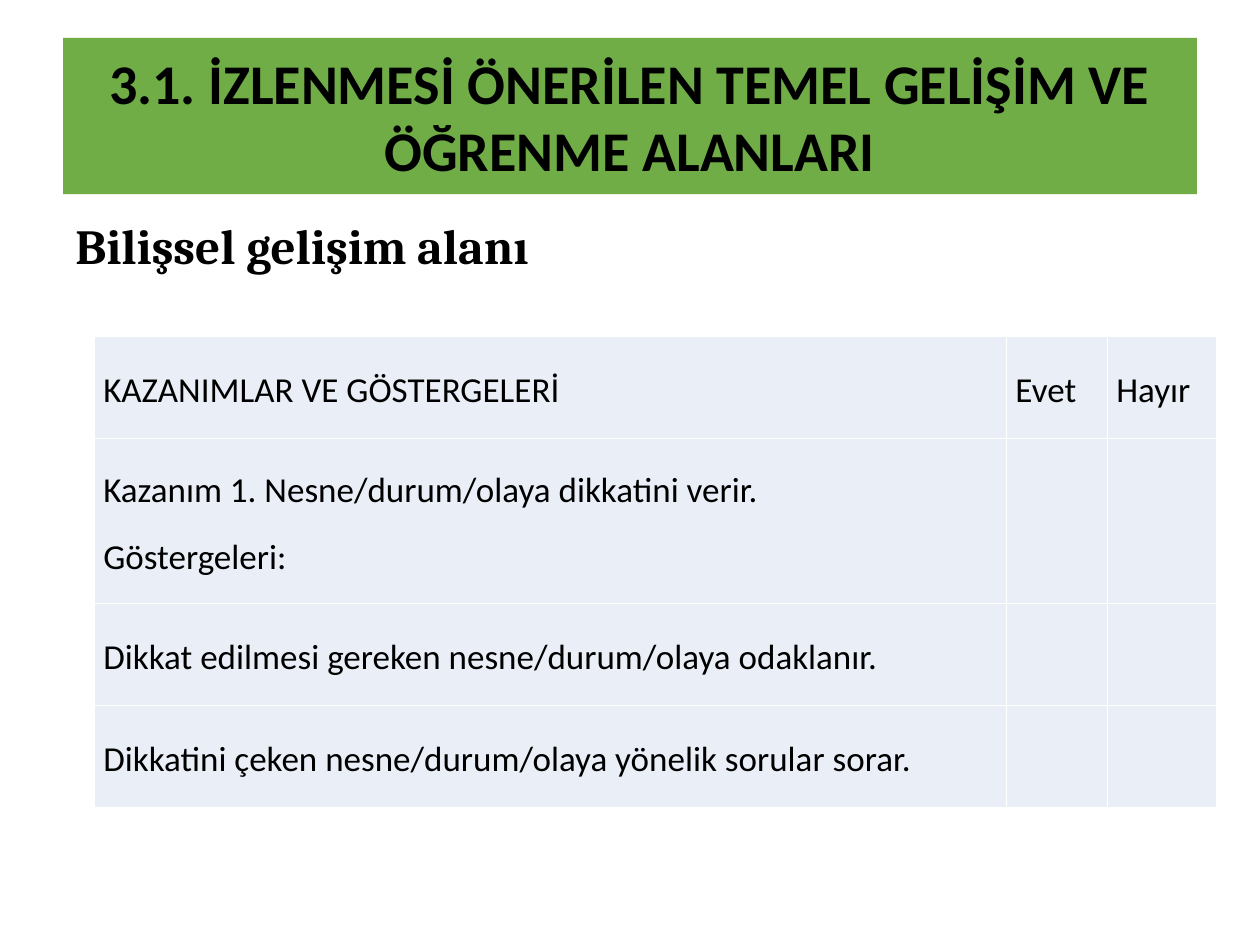
from lxml.etree import SubElement
from pptx import Presentation
from pptx.dml.color import RGBColor as Rgb
from pptx.enum.text import MSO_ANCHOR as Anchor, PP_ALIGN as Align
from pptx.oxml.ns import qn
from pptx.util import Inches, Pt

COLORS = {"banner": "70AD47", "cell": "EAEFF7", "border": "FFFFFF", "text": "000000"}
HEADING = "3.1. İZLENMESİ ÖNERİLEN TEMEL GELİŞİM VE ÖĞRENME ALANLARI"
AREA = "Bilişsel gelişim alanı"
ROWS = [
    ("KAZANIMLAR VE GÖSTERGELERİ", "Evet", "Hayır"),
    ("Kazanım 1. Nesne/durum/olaya dikkatini verir.\nGöstergeleri:", "", ""),
    ("Dikkat edilmesi gereken nesne/durum/olaya odaklanır.", "", ""),
    ("Dikkatini çeken nesne/durum/olaya yönelik sorular sorar.", "", ""),
]
COLUMN_WIDTHS = (7.24, 0.8, 0.87)
ROW_HEIGHTS = (0.81, 1.31, 0.81, 0.81)


def color(name):
    return Rgb.from_string(COLORS[name])


def format_runs(frame, size, font, bold=False):
    for paragraph in frame.paragraphs:
        for run in paragraph.runs:
            run.font.size = Pt(size)
            run.font.name = font
            run.font.bold = bold
            run.font.color.rgb = color("text")


def place_banner(slide, left, top, width, height):
    banner = slide.shapes.title
    banner.left, banner.top = Inches(left), Inches(top)
    banner.width, banner.height = Inches(width), Inches(height)
    banner.fill.solid()
    banner.fill.fore_color.rgb = color("banner")
    frame = banner.text_frame
    frame.text = HEADING
    frame.word_wrap = True
    frame.vertical_anchor = Anchor.MIDDLE
    frame.paragraphs[0].alignment = Align.CENTER
    frame.paragraphs[0].line_spacing = 1.0
    format_runs(frame, 32, "Calibri", bold=True)


def place_area_name(slide, left, top, width, height):
    box = slide.shapes.add_textbox(*map(Inches, (left, top, width, height)))
    frame = box.text_frame
    frame.word_wrap = True
    frame.vertical_anchor = Anchor.TOP
    frame.margin_top, frame.margin_bottom = Inches(0.15), 0
    frame.text = AREA
    format_runs(frame, 28, "Cambria", bold=True)


def add_borders(cell):
    """Draw the four cell edges; they must come before the cell's fill."""
    properties = cell._tc.get_or_add_tcPr()
    for position, edge in enumerate(("lnL", "lnR", "lnT", "lnB")):
        line = SubElement(properties, qn(f"a:{edge}"), w=str(Pt(1)))
        fill = SubElement(line, qn("a:solidFill"))
        SubElement(fill, qn("a:srgbClr"), val=COLORS["border"])
        properties.insert(position, line)


def fill_cell(cell, wording):
    cell.fill.solid()
    cell.fill.fore_color.rgb = color("cell")
    add_borders(cell)
    if not wording:
        return
    cell.vertical_anchor = Anchor.MIDDLE
    cell.margin_left = cell.margin_right = Inches(0.07)
    cell.margin_top = cell.margin_bottom = 0
    cell.text_frame.text = wording
    for paragraph in cell.text_frame.paragraphs:
        paragraph.line_spacing = 1.15
        paragraph.space_after = Pt(10)
    format_runs(cell.text_frame, 20, "Calibri")


def place_checklist(slide, left, top):
    width, height = sum(COLUMN_WIDTHS), sum(ROW_HEIGHTS)
    checklist = slide.shapes.add_table(
        len(ROWS), len(COLUMN_WIDTHS), *map(Inches, (left, top, width, height))).table
    checklist.first_row = checklist.horz_banding = False
    for column, column_width in zip(checklist.columns, COLUMN_WIDTHS):
        column.width = Inches(column_width)
    for row, row_height, wordings in zip(checklist.rows, ROW_HEIGHTS, ROWS):
        row.height = Inches(row_height)
        for cell, wording in zip(row.cells, wordings):
            fill_cell(cell, wording)


def main():
    deck = Presentation()
    deck.slide_width, deck.slide_height = Inches(10), Inches(7.5)
    slide = deck.slides.add_slide(deck.slide_layouts[5])
    margin = 0.05 * 10
    place_banner(slide, margin, 0.04 * 7.5, 10 - 2 * margin, 1.24)
    place_checklist(slide, 1.5 * margin, 2.67)
    place_area_name(slide, margin, 1.56, 6.07, 1.08)
    deck.save("out.pptx")


if __name__ == "__main__":
    main()
